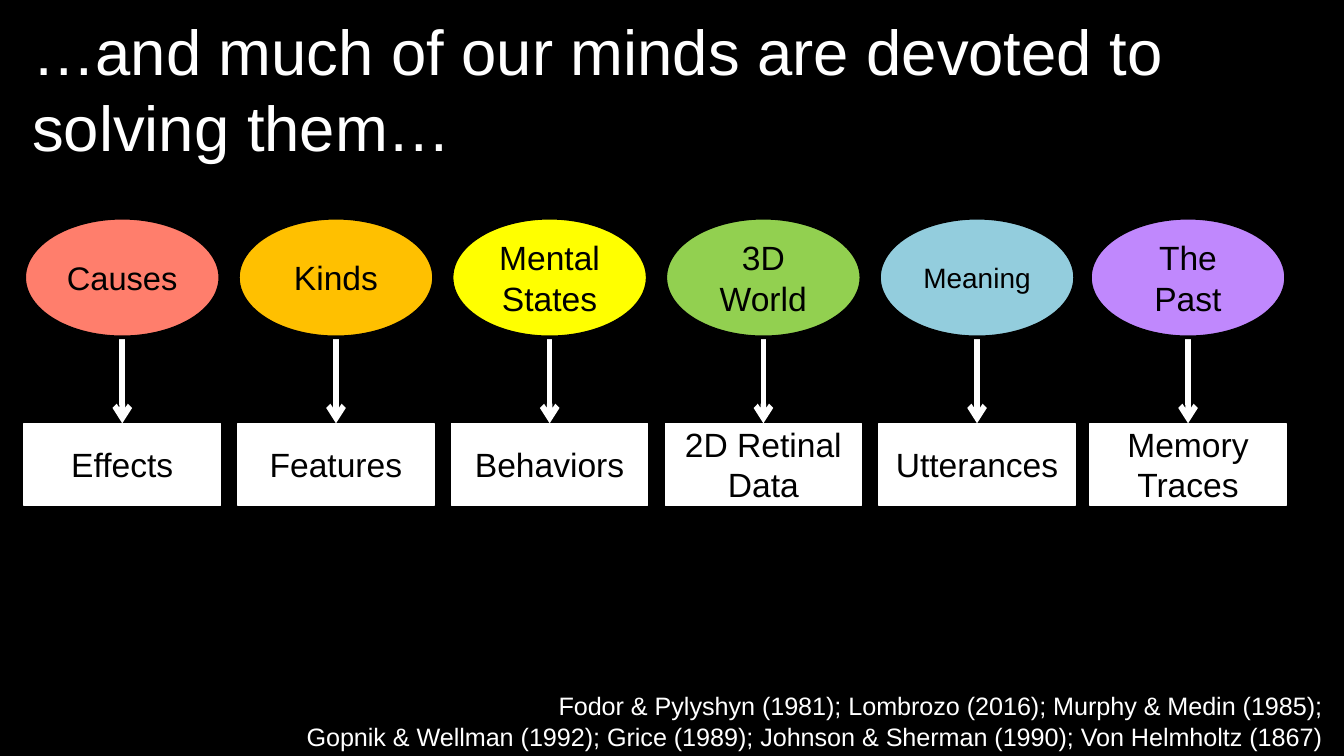
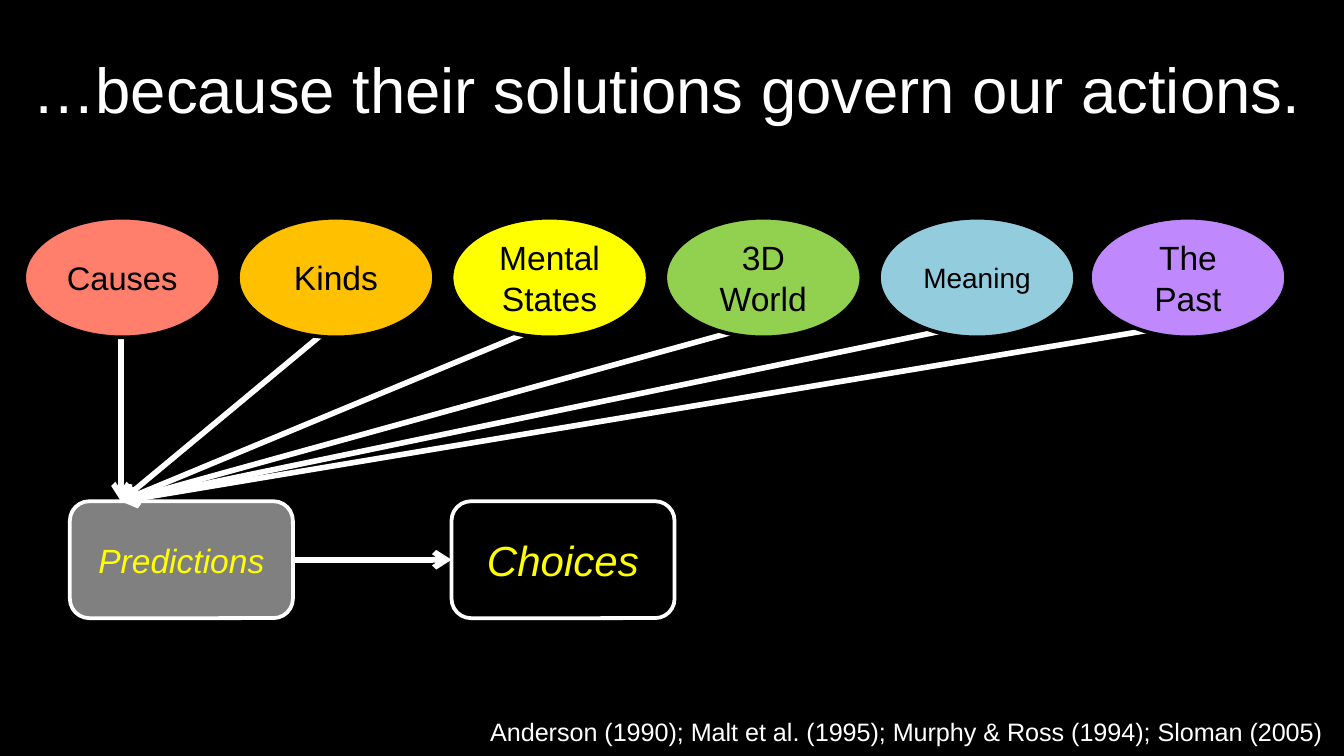
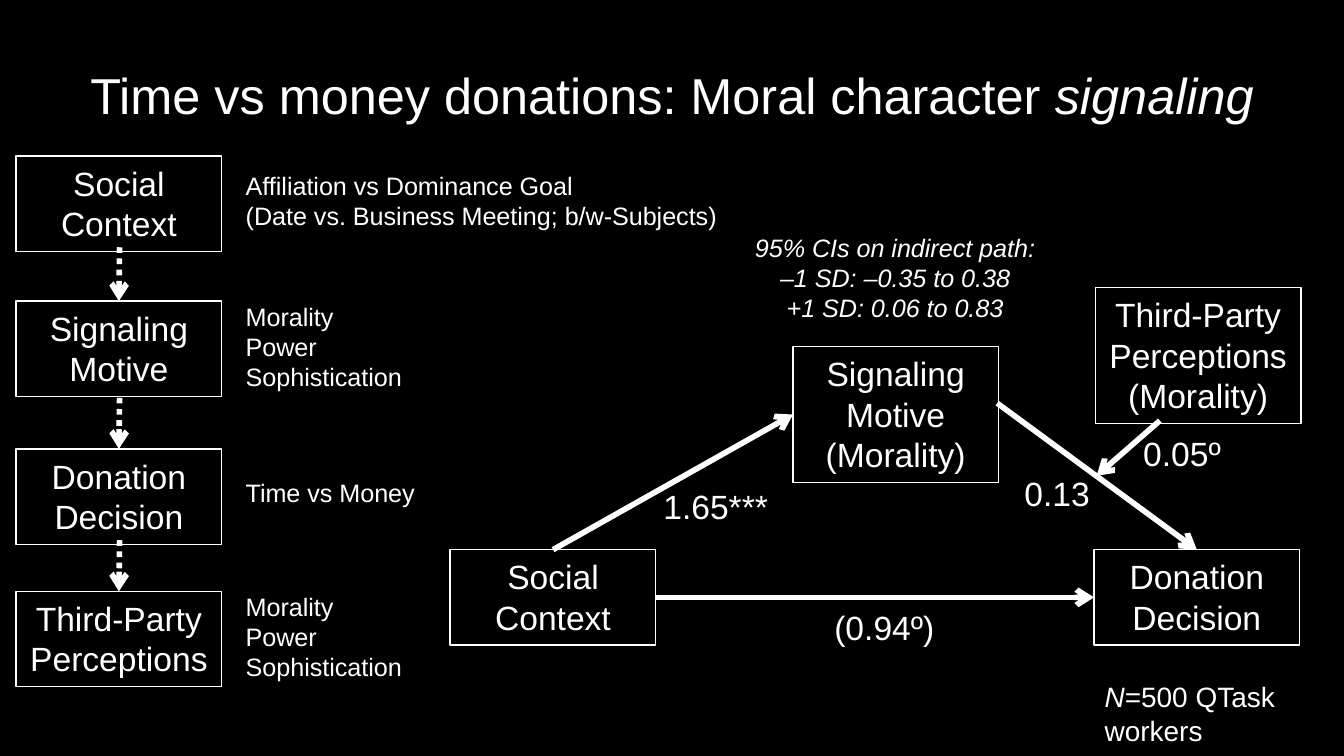
import pptx
import pptx.util
from pptx.dml.color import RGBColor
from pptx.enum.dml import MSO_LINE
from pptx.enum.shapes import MSO_CONNECTOR, MSO_SHAPE
from pptx.enum.text import MSO_ANCHOR, MSO_AUTO_SIZE, PP_ALIGN
from pptx.oxml.ns import qn
from lxml import etree

# Shared look: 100 px to the inch
EMU_PER_PX = 9144
FONT = "Arial"
BLACK, WHITE, YELLOW, GRAY = "000000", "FFFFFF", "FFFF00", "808080"
LEFT, CENTER, RIGHT = PP_ALIGN.LEFT, PP_ALIGN.CENTER, PP_ALIGN.RIGHT
TOP_SIDE, LEFT_SIDE, BOTTOM_SIDE, RIGHT_SIDE = range(4)

# Content: hidden states and what they give rise to
# (left, hidden state, font size, colour, observed data)
INFERENCES = [
    (18, "Causes", 17.5, "FF7E6C", "Effects"),
    (177, "Kinds", 18, "FFC000", "Features"),
    (336, "Mental States", 18, "FFFF00", "Behaviors"),
    (495, "3D World", 18, "92D050", "2D Retinal Data"),
    (654, "Meaning", 15, "93CDDD", "Utterances"),
    (811, "The Past", 18, "C088FD", "Memory Traces"),
]
STATE_WIDTH, STATE_TOP, STATE_HEIGHT = 146, 162, 89
DATA_TOP, DATA_HEIGHT = 315, 61
ARROW_TOP = 241
PREDICTIONS_ENTRY = (90, 373)

MINDS_TITLE = "…and much of our minds are devoted to solving them…"
MINDS_SOURCES = (
    "Fodor & Pylyshyn (1981); Lombrozo (2016); Murphy & Medin (1985);\n"
    "Gopnik & Wellman (1992); Grice (1989); Johnson & Sherman (1990); Von Helmholtz (1867)"
)
ACTIONS_TITLE = "…because their solutions govern our actions."
ACTIONS_SOURCES = "Anderson (1990); Malt et al. (1995); Murphy & Ross (1994); Sloman (2005)"

# Content: donation study
DONATION_TITLE = "Time vs money donations: Moral character signaling"
MEASURES = "Morality\nPower\nSophistication"
# (box top, stage, arrow start or None, detail top, detail width, detail)
STAGES = [
    (116, "Social Context", None, 122, 379,
     "Affiliation vs Dominance Goal\n(Date vs. Business Meeting; b/w-Subjects)"),
    (224, "Signaling\nMotive", 184, 219, 202, MEASURES),
    (334, "Donation Decision", 296, 350, 213, "Time vs Money"),
    (440, "Third-Party Perceptions", 402, 435, 202, MEASURES),
]
# name: (left, top, height, label)
MODEL = {
    "context": (335, 409, 71, "Social Context"),
    "motive": (590, 258, 101, "Signaling\nMotive (Morality)"),
    "decision": (814, 409, 71, "Donation Decision"),
    "perceptions": (815, 214, 101, "Third-Party Perceptions\n(Morality)"),
}
# (left, top, width, height, estimate)
ESTIMATES = [
    (840, 317, 79, 40, "0.05º"),
    (752, 347, 69, 40, "0.13"),
    (604, 447, 108, 40, "(0.94º)"),
    (483, 357, 99, 40, "1.65***"),
]
INTERVALS = "95% CIs on indirect path:\n–1 SD: –0.35 to 0.38\n+1 SD: 0.06 to 0.83"
SAMPLE = "N=500 QTask workers"


# Helpers
def px(length):
    return pptx.util.Emu(round(length * EMU_PER_PX))


def paint(target, color):
    target.solid()
    target.fore_color.rgb = RGBColor.from_string(color)


def write(frame, text, size, color=WHITE, align=LEFT, italic=False,
          italic_part="", anchor=MSO_ANCHOR.TOP, wrap=True):
    frame.text = text
    frame.word_wrap = wrap
    frame.auto_size = MSO_AUTO_SIZE.NONE
    frame.vertical_anchor = anchor
    for paragraph in frame.paragraphs:
        paragraph.alignment = align
        paragraph.font.name = FONT
        paragraph.font.size = pptx.util.Pt(size)
        paragraph.font.color.rgb = RGBColor.from_string(color)
        if italic:
            paragraph.font.italic = True
    if italic_part:
        paragraph = frame.paragraphs[0]
        pieces = text.partition(italic_part)
        paragraph.clear()
        for piece in filter(None, pieces):
            run = paragraph.add_run()
            run.text = piece
            run.font.italic = piece == italic_part


def add_titled_slide(deck, title, place, size, **style):
    slide = deck.slides.add_slide(deck.slide_layouts[5])
    heading = slide.shapes.title
    heading.left, heading.top, heading.width, heading.height = map(px, place)
    write(heading.text_frame, title, size, anchor=MSO_ANCHOR.MIDDLE, **style)
    return slide


def add_note(slide, place, text, size=13.5, **style):
    note = slide.shapes.add_textbox(*map(px, place))
    write(note.text_frame, text, size, **style)


def add_box(slide, kind, place, text, size=18, fill=None, outline=WHITE,
            weight=0.75, **style):
    box = slide.shapes.add_shape(kind, *map(px, place))
    box.shadow.inherit = False
    if fill:
        paint(box.fill, fill)
    else:
        box.fill.background()
    paint(box.line.fill, outline)
    box.line.width = pptx.util.Pt(weight)
    write(box.text_frame, text, size, align=CENTER, **style)
    return box


def add_arrow(slide, start, end, dotted=False):
    """Each end is a point (x, y) or a pair (box, side)."""
    free = [(0, 0) if hasattr(tip[0], "text_frame") else tip for tip in (start, end)]
    arrow = slide.shapes.add_connector(
        MSO_CONNECTOR.STRAIGHT, *(px(value) for point in free for value in point))
    for tip, connect in ((start, arrow.begin_connect), (end, arrow.end_connect)):
        if hasattr(tip[0], "text_frame"):
            connect(*tip)
    paint(arrow.line.fill, WHITE)
    arrow.line.width = pptx.util.Pt(3)
    if dotted:
        arrow.line.dash_style = MSO_LINE.ROUND_DOT
    properties = arrow.element.spPr
    etree.SubElement(properties.find(qn("a:ln")), qn("a:tailEnd"), type="arrow")
    etree.SubElement(properties, qn("a:effectLst"))


def add_hidden_states(slide):
    for left, state, size, color, _ in INFERENCES:
        add_box(slide, MSO_SHAPE.OVAL, (left, STATE_TOP, STATE_WIDTH, STATE_HEIGHT),
                state, size, color, BLACK, 2, color=BLACK, anchor=MSO_ANCHOR.MIDDLE)


# Slides
def build_minds(deck):
    slide = add_titled_slide(deck, MINDS_TITLE, (14, 11, 974, 109), 34)
    for left, _, _, _, data in INFERENCES:
        data_box = add_box(
            slide, MSO_SHAPE.RECTANGLE, (left, DATA_TOP, STATE_WIDTH, DATA_HEIGHT),
            data, fill=WHITE, color=BLACK, anchor=MSO_ANCHOR.MIDDLE)
        add_arrow(slide, (left + STATE_WIDTH // 2, ARROW_TOP), (data_box, TOP_SIDE))
    add_hidden_states(slide)
    add_note(slide, (177, 509, 817, 56), MINDS_SOURCES, align=RIGHT)


def build_actions(deck):
    slide = add_titled_slide(deck, ACTIONS_TITLE, (14, 11, 974, 109), 34)
    predictions, choices = (
        add_box(slide, MSO_SHAPE.ROUNDED_RECTANGLE, (left, 373, 166, 87), text, size,
                fill, weight=2, color=YELLOW, italic=True, anchor=MSO_ANCHOR.MIDDLE)
        for left, text, size, fill in ((52, "Predictions", 18, GRAY),
                                       (336, "Choices", 22.5, BLACK)))
    for left, *_ in INFERENCES:
        add_arrow(slide, (left + STATE_WIDTH // 2 - 1, ARROW_TOP), PREDICTIONS_ENTRY)
    add_arrow(slide, (predictions, RIGHT_SIDE), (choices, LEFT_SIDE))
    add_hidden_states(slide)
    add_note(slide, (177, 528, 817, 33), ACTIONS_SOURCES, align=RIGHT)


def build_donations(deck):
    slide = add_titled_slide(deck, DONATION_TITLE, (12, 23, 976, 94), 27,
                             align=CENTER, italic_part="signaling")
    # Stages of the study, top to bottom
    for top, stage, arrow_start, detail_top, detail_width, detail in STAGES:
        stage_box = add_box(slide, MSO_SHAPE.RECTANGLE, (12, top, 153, 71), stage)
        if arrow_start:
            add_arrow(slide, (89, arrow_start), (stage_box, TOP_SIDE), dotted=True)
        detail_height = 10 + 23 * len(detail.split("\n"))
        add_note(slide, (173, detail_top, detail_width, detail_height), detail)

    # Mediation model
    model = {name: add_box(slide, MSO_SHAPE.RECTANGLE, (left, top, 153, height), label)
             for name, (left, top, height, label) in MODEL.items()}
    add_arrow(slide, (model["context"], TOP_SIDE), (model["motive"], LEFT_SIDE))
    add_arrow(slide, (742, 300), (model["decision"], TOP_SIDE))
    add_arrow(slide, (model["context"], RIGHT_SIDE), (model["decision"], LEFT_SIDE))
    add_arrow(slide, (863, 313), (816, 354))
    for *place, estimate in ESTIMATES:
        add_note(slide, place, estimate, 18, align=CENTER, wrap=False)
    add_note(slide, (550, 168, 232, 78), INTERVALS, align=CENTER, italic=True, wrap=False)
    add_note(slide, (812, 501, 168, 61), SAMPLE, 15, italic_part="N")


def main():
    deck = pptx.Presentation()
    deck.slide_width, deck.slide_height = px(1000), px(562.5)
    paint(deck.slide_master.background.fill, BLACK)
    build_minds(deck)
    build_actions(deck)
    build_donations(deck)
    deck.save("out.pptx")


if __name__ == "__main__":
    main()
